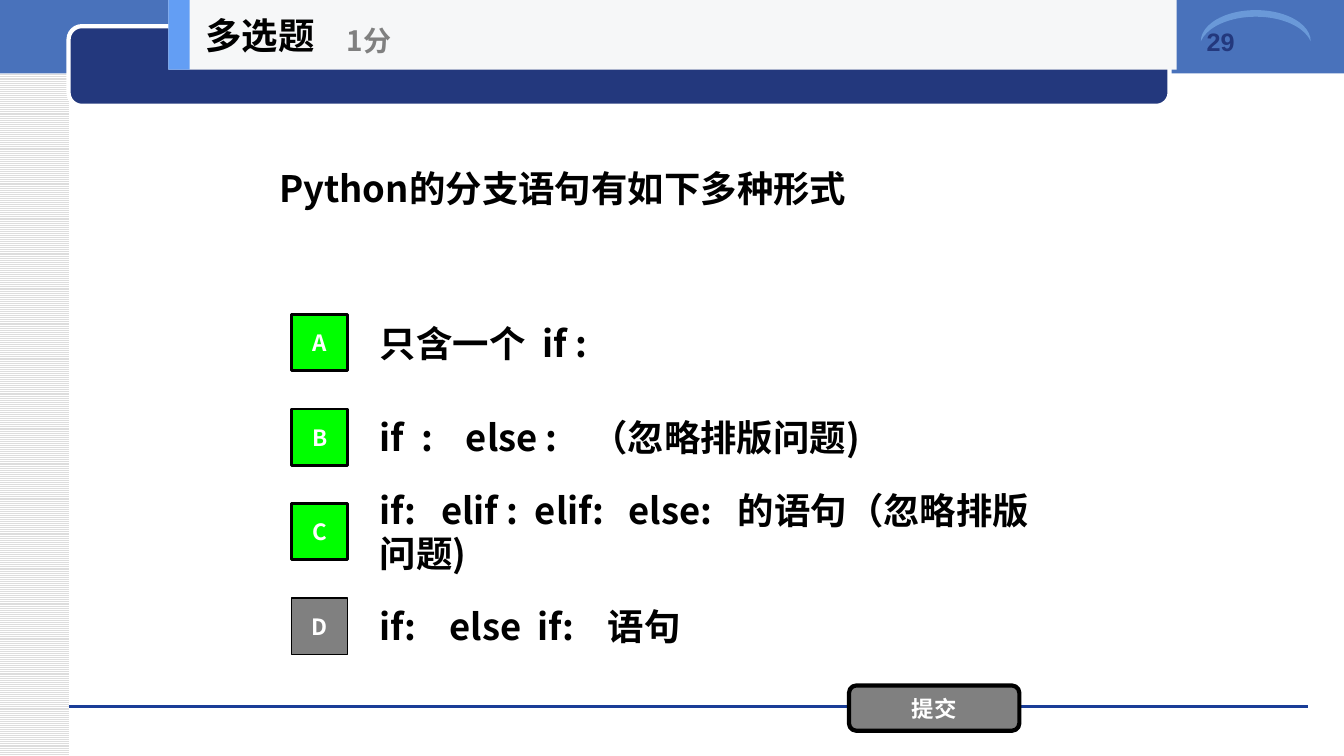
from dataclasses import dataclass
from typing import NamedTuple

from lxml.etree import SubElement
from pptx import Presentation
from pptx.dml.color import RGBColor
from pptx.enum.dml import MSO_PATTERN_TYPE as Pattern
from pptx.enum.shapes import MSO_CONNECTOR_TYPE as Connector, MSO_SHAPE as Shape
from pptx.enum.text import MSO_ANCHOR as Anchor, PP_ALIGN as Align
from pptx.oxml.ns import qn
from pptx.util import Inches, Pt


@dataclass(frozen=True)
class Theme:
    """Colours, fonts and type sizes of the slide."""
    white: str = "FFFFFF"
    black: str = "000000"
    grey: str = "808080"
    navy: str = "23387D"
    band: str = "4972BB"
    rule: str = "1A3D97"
    moon: str = "6A99D8"
    stripe: str = "DDDDDD"
    panel: str = "F6F7F8"
    accent: str = "639EF4"
    correct: str = "00FF00"
    font: str = "Noto Sans CJK SC"
    number_font: str = "Arial"
    body: int = 26
    score: int = 20
    number: int = 18
    button: int = 16


class Frame(NamedTuple):
    """Left, top, width and height in inches."""
    left: float
    top: float
    width: float
    height: float

    def lengths(self) -> list:
        """Return the frame as lengths."""
        return [Inches(value) for value in self]


class Option(NamedTuple):
    """One answer of the question."""
    letter: str
    wording: str
    correct: bool


THEME = Theme()
OPTIONS = [
    Option("A", "只含一个  if :", True),
    Option("B", "if  :    else :    （忽略排版问题)", True),
    Option("C", "if:   elif :  elif:   else:   的语句（忽略排版问题)", True),
    Option("D", "if:    else  if:    语句", False),
]
OPTION_TOP, OPTION_STEP = 3.05, 0.937


def colour(code: str) -> RGBColor:
    """Turn a hex code into a colour."""
    return RGBColor.from_string(code)


def write(box, text: str, *, size: int = THEME.body, ink: str = THEME.black,
          font: str = THEME.font, align=Align.LEFT, anchor=Anchor.MIDDLE,
          wrap: bool = True) -> None:
    """Write one bold paragraph into a box."""
    frame = box.text_frame
    frame.word_wrap = wrap
    frame.vertical_anchor = anchor
    para = frame.paragraphs[0]
    para.alignment = align
    span = para.add_run()
    span.text = text
    span.font.size = Pt(size)
    span.font.bold = True
    span.font.name = font
    span.font.color.rgb = colour(ink)
    SubElement(span.font._element, qn("a:ea")).set("typeface", font)


def add_text(page, frame: Frame, text: str, **style) -> None:
    """Add a text box."""
    write(page.shapes.add_textbox(*frame.lengths()), text, **style)


def add_block(page, frame: Frame, fill: str, *, kind=Shape.RECTANGLE,
              line: str = "", weight: float = 1):
    """Add a flat preset shape."""
    box = page.shapes.add_shape(kind, *frame.lengths())
    box.shadow.inherit = False
    box.fill.solid()
    box.fill.fore_color.rgb = colour(fill)
    if line:
        box.line.color.rgb = colour(line)
        box.line.width = Pt(weight)
    else:
        box.line.fill.background()
    return box


def add_button(page, frame: Frame, text: str, fill: str, **style) -> None:
    """Add an outlined shape with a centred label."""
    box = add_block(page, frame, fill, line=THEME.black, **style)
    write(box, text, size=THEME.button, ink=THEME.white, align=Align.CENTER)


def draw_backdrop(page) -> None:
    """Draw the bands, the rule and the page number."""
    side = add_block(page, Frame(0, 0, 0.68, 7.5), THEME.white)
    side.fill.patterned()
    side.fill.pattern = Pattern.LIGHT_HORIZONTAL
    side.fill.fore_color.rgb = colour(THEME.stripe)
    side.fill.back_color.rgb = colour(THEME.white)
    add_block(page, Frame(0, -0.03, 13.33, 0.76), THEME.band)
    rule = page.shapes.add_connector(
        Connector.STRAIGHT, Inches(0.68), Inches(7.01), Inches(12.97), Inches(7.01))
    rule.line.color.rgb = colour(THEME.rule)
    rule.line.width = Pt(0)
    SubElement(rule._element.spPr, qn("a:effectLst"))
    add_block(page, Frame(0.68, 0.26, 10.92, 0.79), THEME.navy,
              kind=Shape.ROUNDED_RECTANGLE, line=THEME.white, weight=3)
    moon = add_block(page, Frame(12.3, -0.29, 0.31, 1.09), THEME.moon, kind=Shape.MOON)
    moon.adjustments[0] = 0.212
    moon.rotation = 90
    add_text(page, Frame(11.87, 0.21, 1.21, 0.71), "29", size=THEME.number,
             ink=THEME.navy, font=THEME.number_font, anchor=Anchor.TOP)


def draw_question(page) -> None:
    """Draw the question, its options and the submit button."""
    add_text(page, Frame(2.67, 0.69, 8, 2.34), "Python的分支语句有如下多种形式")
    for row, option in enumerate(OPTIONS):
        top = OPTION_TOP + row * OPTION_STEP
        add_text(page, Frame(3.67, top, 7, 0.7), option.wording)
        add_button(page, Frame(2.89, top + 0.07, 0.56, 0.56), option.letter,
                   THEME.correct if option.correct else THEME.grey,
                   weight=2 if option.correct else 1)
    add_button(page, Frame(8.42, 6.8, 1.69, 0.45), "提交", THEME.grey,
               kind=Shape.ROUNDED_RECTANGLE, weight=3)


def draw_heading(page) -> None:
    """Draw the heading panel with the question type and score."""
    add_block(page, Frame(1.67, 0, 10, 0.69), THEME.panel)
    add_block(page, Frame(1.67, 0, 0.21, 0.69), THEME.accent)
    add_text(page, Frame(1.94, 0, 2.08, 0.69), "多选题", wrap=False)
    add_text(page, Frame(3.34, 0.12, 2.5, 0.56), "1分", size=THEME.score,
             ink=THEME.grey, wrap=False)


def main() -> None:
    """Build and save the deck."""
    deck = Presentation()
    deck.slide_width, deck.slide_height = Inches(13.33), Inches(7.5)
    page = deck.slides.add_slide(deck.slide_layouts[6])
    draw_backdrop(page)
    draw_question(page)
    draw_heading(page)
    deck.save("out.pptx")


if __name__ == "__main__":
    main()
